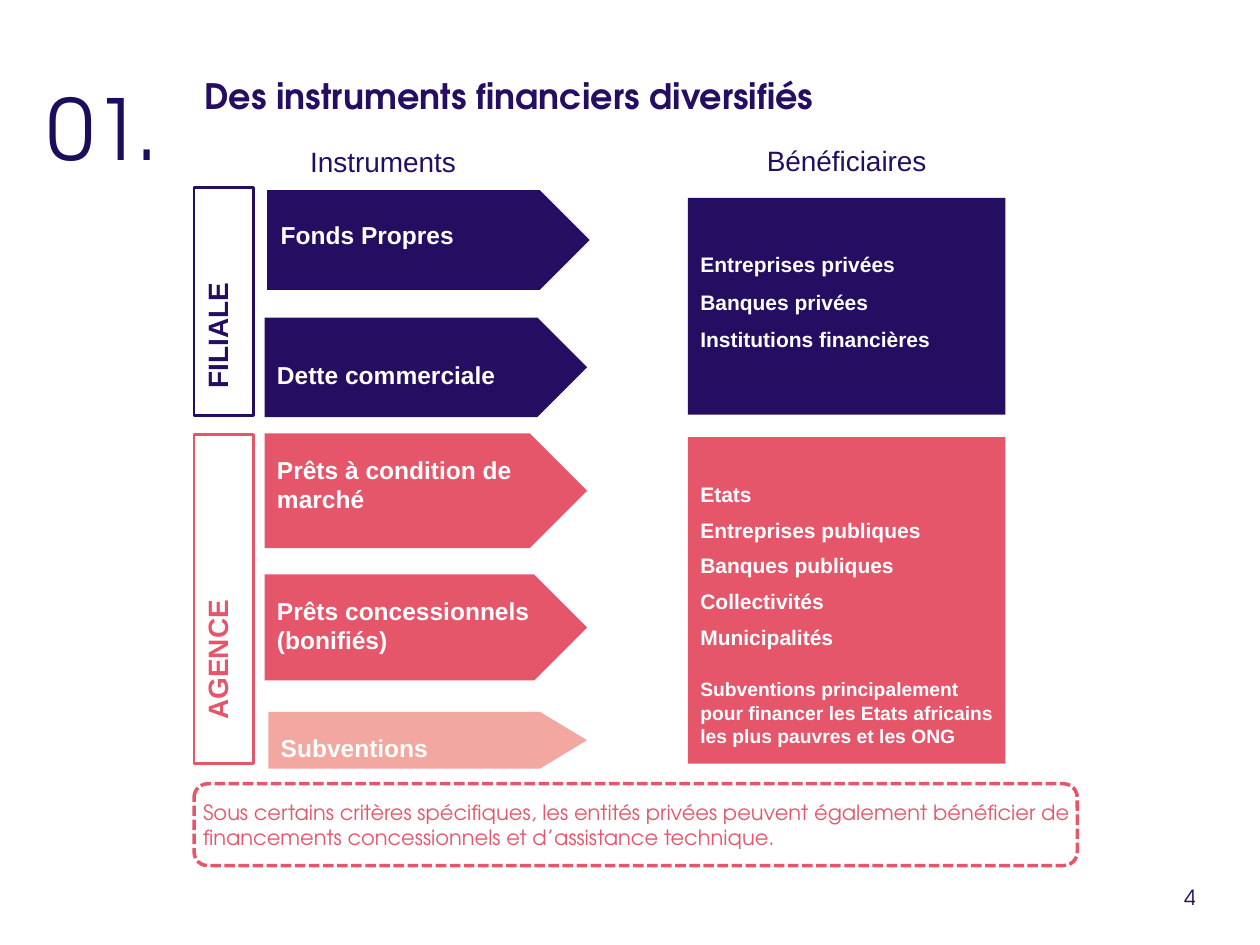
"""Build the slide on diversified financial instruments and their beneficiaries."""
import pptx
import pptx.chart.data
import pptx.dml.color
import pptx.enum.dml
import pptx.enum.shapes
import pptx.enum.text
import pptx.oxml
import pptx.oxml.ns
import pptx.util

Inches = pptx.util.Inches
SHAPES = pptx.enum.shapes.MSO_SHAPE
ANCHOR = pptx.enum.text.MSO_ANCHOR
ALIGN = pptx.enum.text.PP_ALIGN

NAVY, CORAL, SALMON, WHITE = "250E62", "E6566B", "F3A7A1", "FFFFFF"
BODY_FONT, DISPLAY_FONT = "Arial", "TeX Gyre Adventor"


def rgb(value):
    return pptx.dml.color.RGBColor.from_string(value)


def place(shape, left, top, width, height):
    shape.left, shape.top = Inches(left), Inches(top)
    shape.width, shape.height = Inches(width), Inches(height)


def write(shape, lines, size, color, font=BODY_FONT, bold=False, align=ALIGN.LEFT,
          anchor=ANCHOR.TOP, wrap=True, spacing=None, before=0, indent=0):
    frame = shape.text_frame
    frame.word_wrap = wrap
    frame.auto_size = pptx.enum.text.MSO_AUTO_SIZE.NONE
    frame.vertical_anchor = anchor
    for index, line in enumerate(lines):
        paragraph = frame.add_paragraph() if index else frame.paragraphs[0]
        paragraph.alignment = align
        paragraph.space_before = pptx.util.Pt(before if index else 0)
        if spacing:
            paragraph.line_spacing = spacing
        properties = paragraph._p.get_or_add_pPr()
        properties.set("marL", str(Inches(indent)))
        properties.set("indent", "0")
        properties.append(pptx.oxml.parse_xml(
            f'<a:buNone {pptx.oxml.ns.nsdecls("a")}/>'))
        for part_index, part in enumerate(line.split("\n")):
            if part_index:
                paragraph.add_line_break()
            run = paragraph.add_run()
            run.text = part
            run.font.name, run.font.size = font, pptx.util.Pt(size)
            run.font.bold = bold
            run.font.color.rgb = rgb(color)


def add_label(slide, box, text, size, color, **style):
    label = slide.shapes.add_textbox(*map(Inches, box))
    write(label, [text], size, color, **style)


def add_block(slide, kind, box, fill):
    block = slide.shapes.add_shape(kind, *map(Inches, box))
    block.shadow.inherit = False
    block.fill.solid()
    block.fill.fore_color.rgb = rgb(fill)
    block.line.fill.background()
    return block


def add_outline(slide, kind, box, color, width):
    outline = slide.shapes.add_shape(kind, *map(Inches, box))
    outline.shadow.inherit = False
    outline.fill.background()
    outline.line.color.rgb = rgb(color)
    outline.line.width = pptx.util.Pt(width)
    return outline


def add_institution(slide, top, height, name, color, indent):
    institution = add_outline(slide, SHAPES.RECTANGLE, (1.54, top, 0.47, height), color, 1.5)
    institution.text_frame._txBody.bodyPr.set("vert", "vert270")
    write(institution, [name], 16, color, bold=True, indent=indent)


def add_instrument(slide, box, fill, text="", spacing=None, bottom=0.05, point=0.5):
    arrow = add_block(slide, SHAPES.PENTAGON, box, fill)
    arrow.adjustments[0] = point
    if text:
        arrow.text_frame.margin_bottom = Inches(bottom)
        write(arrow, [text], 14, WHITE, bold=True, anchor=ANCHOR.MIDDLE, spacing=spacing)


def add_beneficiaries(slide, top, height, fill, names, margin_top=0.05, margin_bottom=0.05, **style):
    block = add_block(slide, SHAPES.RECTANGLE, (5.46, top, 2.52, height), fill)
    block.text_frame.margin_top = Inches(margin_top)
    block.text_frame.margin_bottom = Inches(margin_bottom)
    write(block, names, 12, WHITE, bold=True, **style)


def add_headings(slide):
    title, number = slide.placeholders
    place(title, 1.52, 0.56, 7.96, 0.39)
    write(title, ["Des instruments financiers diversifiés"], 20, NAVY, DISPLAY_FONT,
          bold=True, anchor=ANCHOR.MIDDLE)
    place(number, 0.28, 0.56, 1.18, 0.87)
    write(number, ["01."], 48, "1C0E5D", DISPLAY_FONT)
    add_label(slide, (1.77, 1.1, 2.54, 0.37), "Instruments", 16, NAVY, align=ALIGN.CENTER)
    add_label(slide, (5.28, 1.09, 2.88, 0.38), "Bénéficiaires", 16, NAVY, align=ALIGN.CENTER)


def add_footnote(slide):
    note = add_outline(slide, SHAPES.ROUNDED_RECTANGLE, (1.54, 6.22, 7.01, 0.65), CORAL, 2)
    note.line.dash_style = pptx.enum.dml.MSO_LINE.SQUARE_DOT
    frame = note.text_frame
    frame.margin_left = frame.margin_right = Inches(0.04)
    frame.margin_top = frame.margin_bottom = Inches(0.04)
    write(note, ["Sous certains critères spécifiques, les entités privées peuvent également "
                 "bénéficier de\nfinancements concessionnels et d’assistance technique."],
          12, CORAL, DISPLAY_FONT, anchor=ANCHOR.MIDDLE, wrap=False)


def main():
    presentation = pptx.Presentation()
    presentation.slide_width, presentation.slide_height = Inches(10), Inches(7.5)
    slide = presentation.slides.add_slide(presentation.slide_layouts[1])

    add_headings(slide)
    add_institution(slide, 1.49, 1.81, "FILIALE", NAVY, 0.12)
    add_institution(slide, 3.45, 2.61, "AGENCE", CORAL, 0.25)
    add_footnote(slide)

    add_instrument(slide, (2.12, 1.51, 2.56, 0.79), NAVY)
    add_label(slide, (2.13, 1.7, 2.54, 0.34), "Fonds Propres", 14, WHITE, bold=True)
    add_instrument(slide, (2.1, 2.52, 2.56, 0.79), NAVY, "Dette commerciale", spacing=1.5)
    add_instrument(slide, (2.1, 3.44, 2.56, 0.91), CORAL, "Prêts à condition de marché",
                   bottom=0.15)
    add_instrument(slide, (2.1, 4.56, 2.56, 0.84), CORAL, "Prêts concessionnels (bonifiés)",
                   bottom=0.08)
    add_instrument(slide, (2.13, 5.65, 2.53, 0.45), SALMON, "Subventions", spacing=1.5,
                   point=0.83)

    add_beneficiaries(slide, 1.57, 1.72, NAVY,
                      ["Entreprises privées", "Banques privées", "Institutions financières"],
                      margin_bottom=0.22, anchor=ANCHOR.MIDDLE, spacing=1.5)
    add_beneficiaries(slide, 3.47, 2.59, CORAL,
                      ["Etats", "Entreprises publiques", "Banques publiques",
                       "Collectivités", "Municipalités"], margin_top=0.35, before=6)
    add_label(slide, (5.46, 5.33, 2.6, 0.66),
              "Subventions principalement pour financer les Etats africains "
              "les plus pauvres et les ONG", 11, WHITE, bold=True)
    add_label(slide, (9.3, 6.97, 0.41, 0.3), "4", 12, NAVY, font=DISPLAY_FONT, wrap=False)

    presentation.save("out.pptx")


if __name__ == "__main__":
    main()
